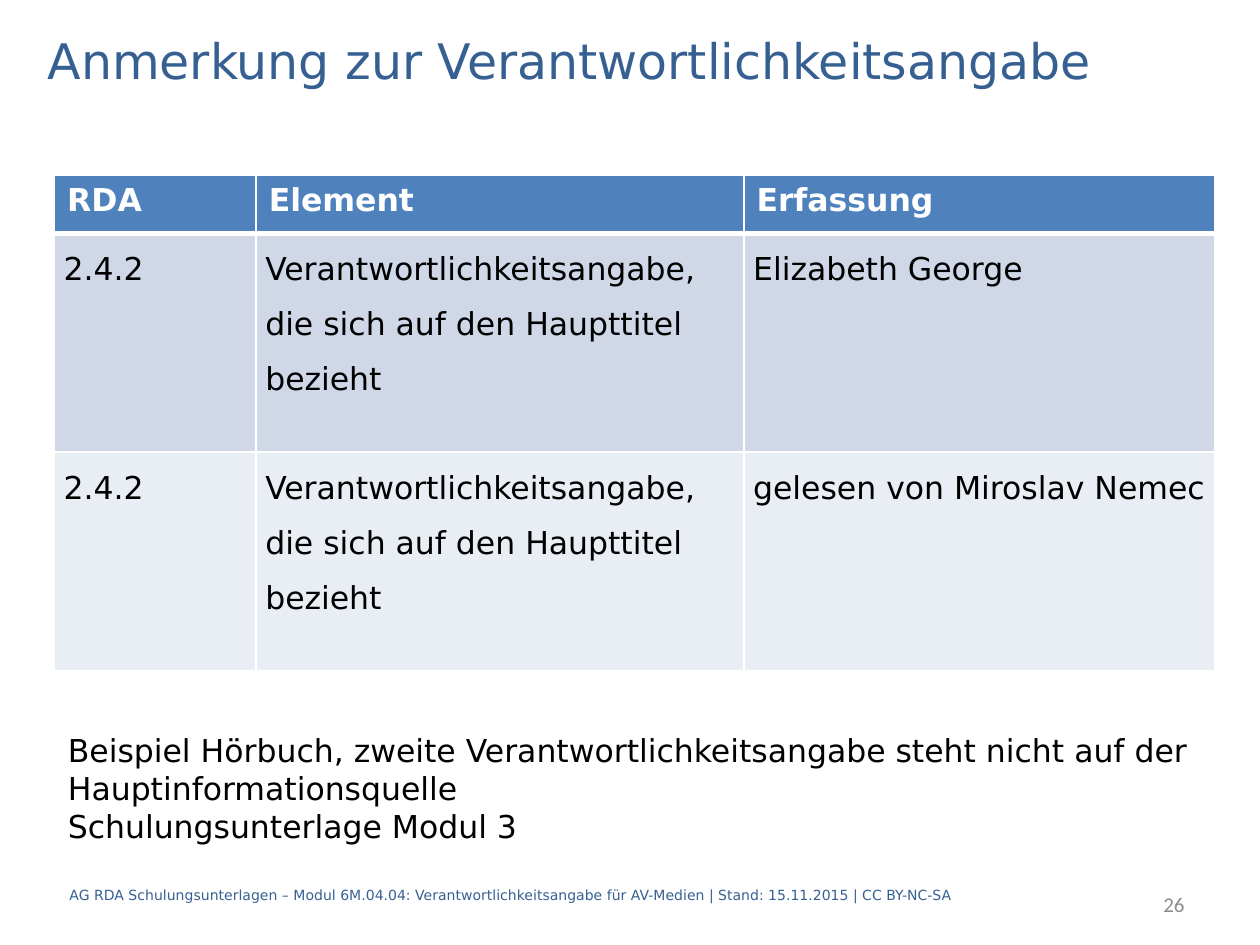
import pptx
import pptx.util
import pptx.dml.color
import pptx.enum.text
import pptx.oxml.ns
from lxml import etree

Pt = pptx.util.Pt
Align = pptx.enum.text.PP_ALIGN
Anchor = pptx.enum.text.MSO_ANCHOR
SANS = "DejaVu Sans"
HUES = {
    "blue": "376092", "head": "4F81BD", "odd": "D0D8E8", "even": "E9EDF4",
    "white": "FFFFFF", "black": "000000", "grey": "8C8C8C",
}


def style(para, size, hue, face=SANS, bold=False, align=Align.LEFT):
    font = para.font
    font.name, font.size, font.bold = face, Pt(size), bold
    font.color.rgb = pptx.dml.color.RGBColor.from_string(HUES[hue])
    para.alignment = align


def border(cell, widths):
    props = cell._tc.get_or_add_tcPr()
    for spot, (side, width) in enumerate(widths.items()):
        line = etree.Element(pptx.oxml.ns.qn("a:ln" + side), w=str(Pt(width)))
        fill = etree.SubElement(line, pptx.oxml.ns.qn("a:solidFill"))
        etree.SubElement(fill, pptx.oxml.ns.qn("a:srgbClr"), val=HUES["white"])
        props.insert(spot, line)


deck = pptx.Presentation()
deck.slide_width, deck.slide_height = Pt(720), Pt(540)
slide = deck.slides.add_slide(deck.slide_layouts[5])

# Title
title = slide.shapes.title
title.left, title.top, title.width, title.height = Pt(20), Pt(14.5), Pt(680), Pt(40)
title.text = "Anmerkung zur Verantwortlichkeitsangabe"
title.text_frame.auto_size = pptx.enum.text.MSO_AUTO_SIZE.NONE
title.text_frame.vertical_anchor = Anchor.MIDDLE
style(title.text_frame.paragraphs[0], 28, "blue")

# Table
part = "Verantwortlichkeitsangabe, die sich auf den Haupttitel bezieht"
rows = [
    ("RDA", "Element", "Erfassung"),
    ("2.4.2", part, "Elizabeth George"),
    ("2.4.2", part, "gelesen von Miroslav Nemec"),
]
fills = ["head", "odd", "even"]
highs = [33, 125, 125]
wides = [115.2, 278.8, 269.2]
table = slide.shapes.add_table(
    3, 3, Pt(31.2), Pt(100.4), Pt(sum(wides)), Pt(sum(highs))).table
for col, wide in zip(table.columns, wides):
    col.width = Pt(wide)
for r, texts in enumerate(rows):
    table.rows[r].height = Pt(highs[r])
    for c, text in enumerate(texts):
        cell = table.cell(r, c)
        cell.text = text
        cell.fill.solid()
        cell.fill.fore_color.rgb = pptx.dml.color.RGBColor.from_string(HUES[fills[r]])
        para = cell.text_frame.paragraphs[0]
        if r == 0:
            style(para, 18, "white", bold=True)
        else:
            style(para, 18, "black")
            para.line_spacing = 1.5
            cell.margin_left = cell.margin_right = Pt(5.2)
            cell.margin_top = cell.margin_bottom = 0
        border(cell, {"L": 1, "R": 1, "T": 3 if r == 1 else 1, "B": 3 if r == 0 else 1})

# Example note, footer and page number
note = ["Beispiel Hörbuch, zweite Verantwortlichkeitsangabe steht nicht auf der "
        "Hauptinformationsquelle", "Schulungsunterlage Modul 3"]
foot = ["AG RDA Schulungsunterlagen – Modul 6M.04.04: Verantwortlichkeitsangabe "
        "für AV-Medien | Stand: 15.11.2015 | CC BY-NC-SA"]
boxes = [
    (note, (31.7, 417.6, 680, 65), 18, "black", SANS, Align.LEFT),
    (foot, (32.6, 497, 629, 29), 8, "blue", SANS, Align.LEFT),
    (["26"], (569.5, 502, 114.5, 29), 12, "grey", "Calibri", Align.RIGHT),
]
for lines, area, size, hue, face, align in boxes:
    frame = slide.shapes.add_textbox(*map(Pt, area)).text_frame
    frame.word_wrap = True
    frame.vertical_anchor = Anchor.MIDDLE
    frame.text = "\n".join(lines)
    for para in frame.paragraphs:
        style(para, size, hue, face, align=align)

deck.save("out.pptx")
